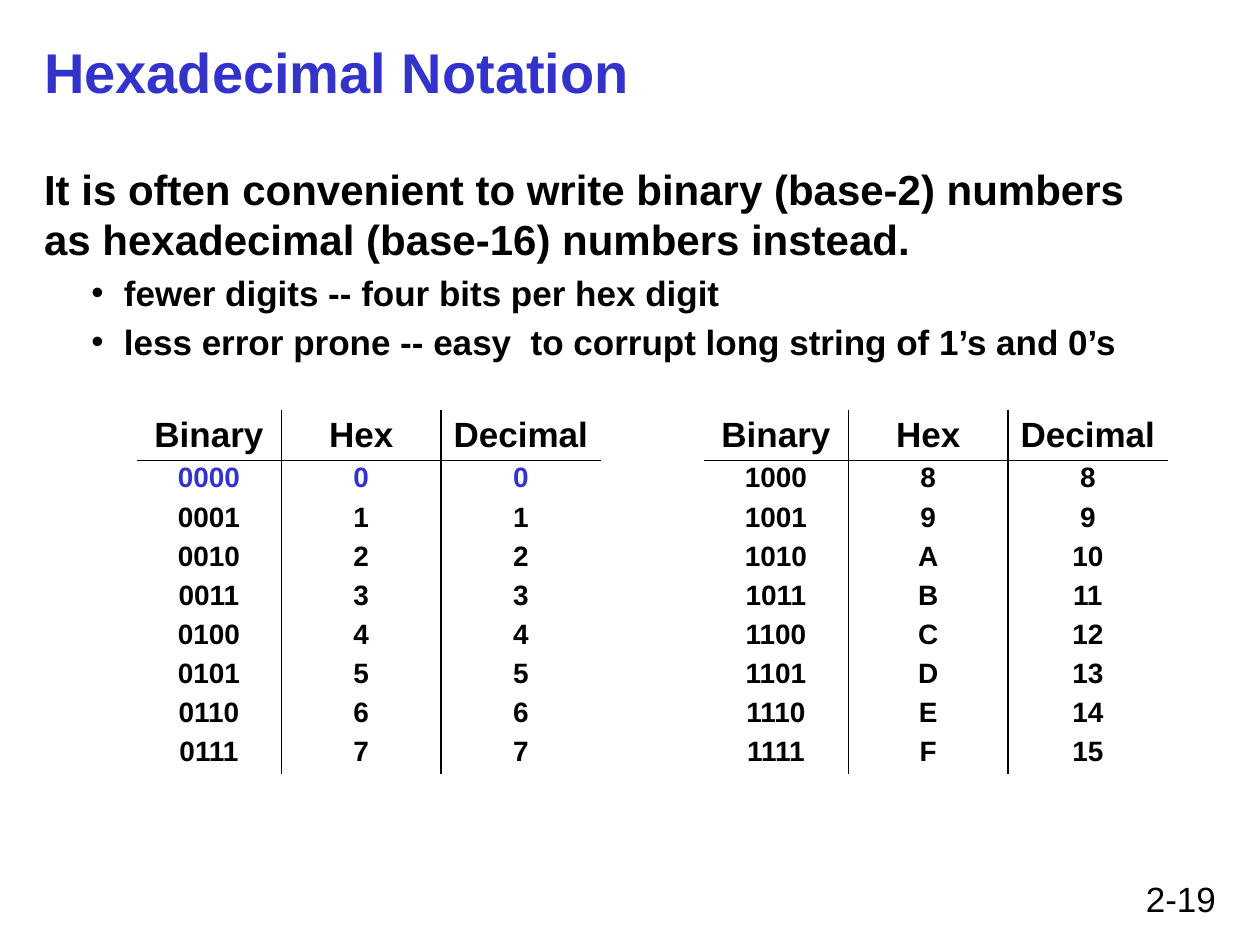
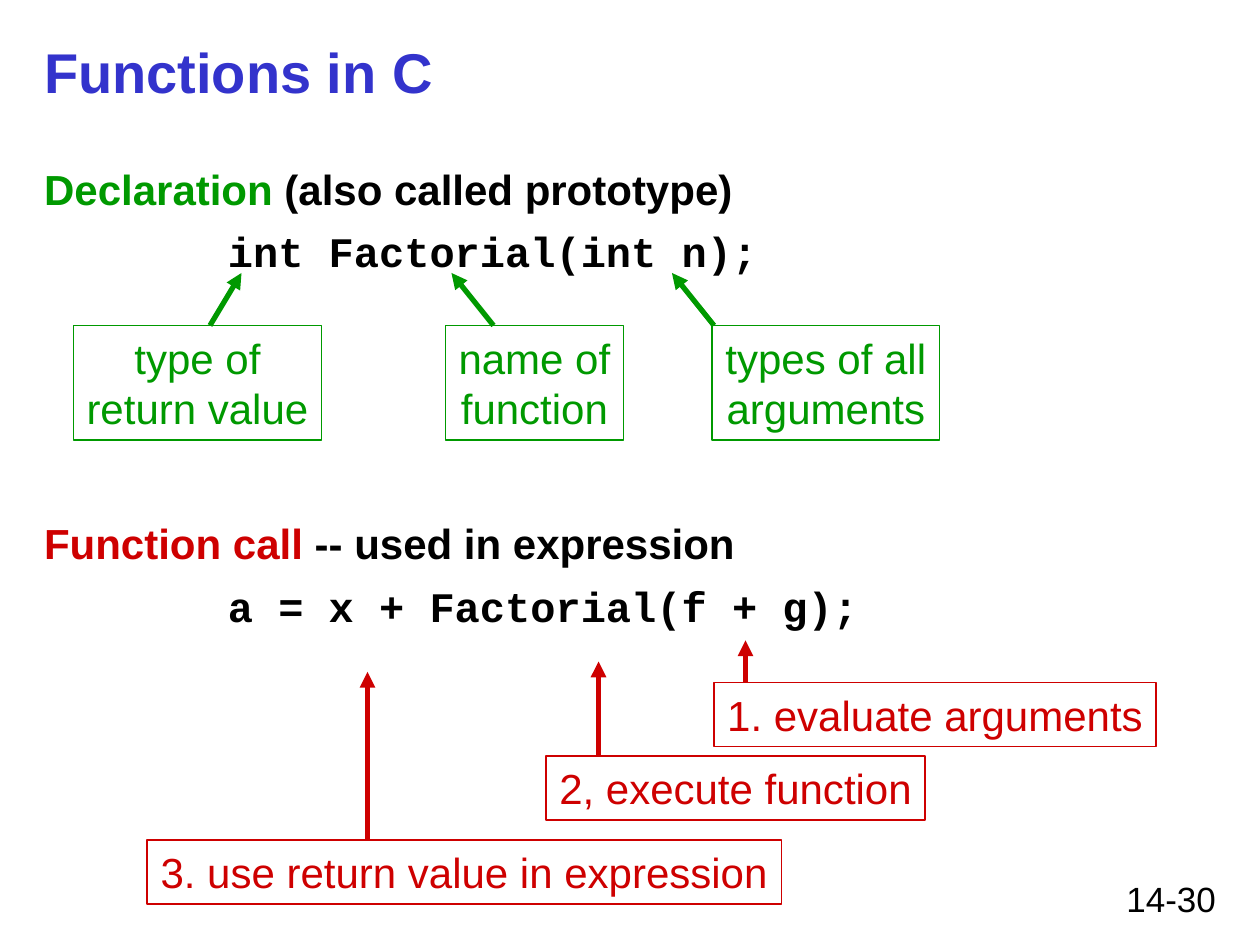
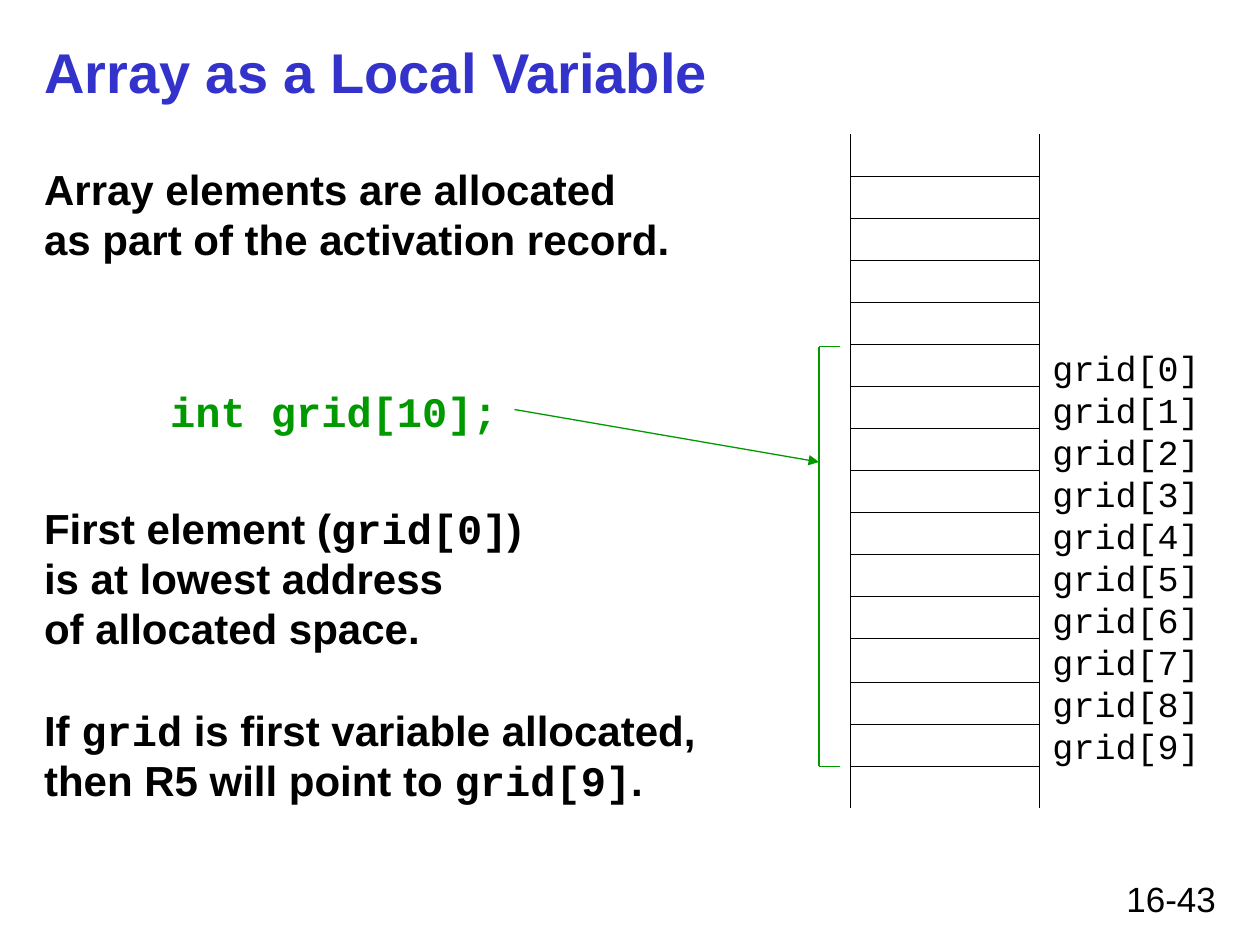
from lxml.etree import SubElement
from pptx import Presentation
from pptx.dml.color import RGBColor
from pptx.enum.shapes import MSO_CONNECTOR, MSO_SHAPE
from pptx.enum.text import MSO_ANCHOR, MSO_AUTO_SIZE, PP_ALIGN
from pptx.oxml.ns import qn
from pptx.util import Inches, Pt

HEX = {"ink": "000000", "blue": "3333CC", "green": "009900", "red": "CE0000"}
SANS, MONO = "Arial", "Courier New"
COLS, ROWS = 120, 90
LEAD = 1.2
CODE = {"lead": 31, "gap": 4.8}


def rgb(name):
    return RGBColor.from_string(HEX[name])


def put(obj, **vals):
    for key, val in vals.items():
        setattr(obj, key, val)


class Deck:
    """Holds the shared style and the slide being built; lengths are grid units."""

    def __init__(self):
        self.prs = Presentation()
        put(self.prs, slide_width=Inches(10), slide_height=Inches(7.5))
        self.slide = None

    def x(self, cols):
        return round(self.prs.slide_width * cols / COLS)

    def y(self, rows):
        return round(self.prs.slide_height * rows / ROWS)

    def area(self, left, top, wide, high):
        return self.x(left), self.y(top), self.x(wide), self.y(high)

    def place(self, shape, *box):
        put(shape, **dict(zip(("left", "top", "width", "height"), self.area(*box))))

    def span(self, para, text, size, tint="ink", font=SANS, bold=False):
        for i, line in enumerate(text.split("\n")):
            if i:
                para.add_line_break()
            if line:
                run = para.add_run()
                run.text = line
                put(run.font, size=Pt(size), name=font, bold=bold)
                run.font.color.rgb = rgb(tint)

    def page(self, title, number):
        self.slide = self.prs.slides.add_slide(self.prs.slide_layouts[1])
        head = self.slide.shapes.title
        self.place(head, 3, 2.25, 114, 9)
        put(head.text_frame, vertical_anchor=MSO_ANCHOR.MIDDLE,
            auto_size=MSO_AUTO_SIZE.NONE)
        para = head.text_frame.paragraphs[0]
        para.alignment = PP_ALIGN.LEFT
        self.span(para, title, 32, "blue", bold=True)
        self.note(number, 86, 83, 31, 5, align=PP_ALIGN.RIGHT)

    def body(self, *items):
        """Fill the body; an item is its spans and its paragraph format."""
        shape = self.slide.placeholders[1]
        self.place(shape, 3, 11.25, 114, 65)
        frame = shape.text_frame
        put(frame, auto_size=MSO_AUTO_SIZE.NONE, vertical_anchor=MSO_ANCHOR.TOP,
            margin_top=self.y(4.3))
        for i, (spans, form) in enumerate(items):
            para = frame.add_paragraph() if i else frame.paragraphs[0]
            size, dot = form.get("size", 24), form.get("dot")
            put(para, level=int(bool(dot)), alignment=PP_ALIGN.LEFT,
                line_spacing=Pt(form.get("lead", size * LEAD)),
                space_before=Pt(form.get("gap", 0)))
            props = para._p.get_or_add_pPr()
            props.set("marL", str(self.x(form.get("left", 0))))
            props.set("indent", str(self.x(form.get("hang", 0))))
            if dot:
                SubElement(props, qn("a:buChar")).set("char", dot)
            else:
                SubElement(props, qn("a:buNone"))
            for text, *look in spans:
                self.span(para, text, size, *look, bold=True)

    def fill(self, frame, text, size, tint, font, align):
        put(frame, word_wrap=False, auto_size=MSO_AUTO_SIZE.NONE)
        para = frame.paragraphs[0]
        put(para, alignment=align, line_spacing=Pt(size * LEAD))
        self.span(para, text, size, tint, font)

    def note(self, text, *box, font=SANS, align=PP_ALIGN.CENTER):
        shape = self.slide.shapes.add_textbox(*self.area(*box))
        self.fill(shape.text_frame, text, 20, "ink", font, align)
        shape.text_frame.word_wrap = True

    def label(self, text, tint, *box):
        shape = self.slide.shapes.add_shape(MSO_SHAPE.RECTANGLE, *self.area(*box))
        shape.shadow.inherit = False
        shape.fill.background()
        shape.line.color.rgb = rgb(tint)
        shape.line.width = Pt(0.75)
        shape.text_frame.vertical_anchor = MSO_ANCHOR.MIDDLE
        self.fill(shape.text_frame, text, 24, tint, SANS, PP_ALIGN.CENTER)

    def line(self, x1, y1, x2, y2, tint="ink", width=0.75, arrow=False):
        link = self.slide.shapes.add_connector(
            MSO_CONNECTOR.STRAIGHT, self.x(x1), self.y(y1), self.x(x2), self.y(y2))
        link.line.color.rgb = rgb(tint)
        link.line.width = Pt(width)
        if arrow:
            SubElement(link.line._get_or_add_ln(), qn("a:tailEnd")).set("type", "triangle")
        SubElement(link._element.spPr, qn("a:effectLst"))

    def edges(self, cell, shown):
        """Draw the sides named in shown and clear the others."""
        props = cell._tc.get_or_add_tcPr()
        for side in "LRTB":
            edge = SubElement(props, qn(f"a:ln{side}"))
            edge.set("w", str(Pt(1)))
            if side in shown:
                fill = SubElement(edge, qn("a:solidFill"))
                SubElement(fill, qn("a:srgbClr")).set("val", HEX["ink"])
            else:
                SubElement(edge, qn("a:noFill"))

    def table(self, left, top, rows, tints):
        wides, highs = (13.8, 15.2, 15.2), [4.86] + [3.73] * (len(rows) - 1)
        grid = self.slide.shapes.add_table(
            len(rows), len(wides), *self.area(left, top, sum(wides), sum(highs))).table
        put(grid, first_row=False, horz_banding=False)
        for col, wide in zip(grid.columns, wides):
            col.width = self.x(wide)
        for r, (row, high) in enumerate(zip(rows, highs)):
            grid.rows[r].height = self.y(high)
            for c, text in enumerate(row):
                cell = grid.cell(r, c)
                put(cell, margin_left=0, margin_right=0, margin_top=0,
                    margin_bottom=0, vertical_anchor=MSO_ANCHOR.MIDDLE)
                sides = ("L" if c else "") + ("R" if c < len(wides) - 1 else "")
                self.edges(cell, sides + {0: "B", 1: "T"}.get(r, ""))
                cell.fill.background()
                para = cell.text_frame.paragraphs[0]
                put(para, alignment=PP_ALIGN.CENTER, line_spacing=0.85 if r else 1.0)
                self.span(para, text, 16 if r else 20, tints.get(r, "ink"), bold=True)


def hexes(deck):
    deck.page("Hexadecimal Notation", "2-19")
    dots = {"size": 20, "gap": 4, "dot": "•", "left": 7.6, "hang": -3.1}
    deck.body(
        ([("It is often convenient to write binary (base-2) numbers\n"
           "as hexadecimal (base-16) numbers instead.",)], {}),
        ([("fewer digits -- four bits per hex digit",)], dots),
        ([("less error prone -- easy  to corrupt long string of 1’s and 0’s",)], dots))
    for left, first, tints in ((13, 0, {1: "blue"}), (67, 8, {})):
        rows = [(f"{n:04b}", f"{n:X}", str(n)) for n in range(first, first + 8)]
        deck.table(left, 39, [("Binary", "Hex", "Decimal")] + rows, tints)


def calls(deck):
    deck.page("Functions in C", "14-30")
    code = {**CODE, "left": 17.5}
    deck.body(
        ([("Declaration", "green"), (" (also called prototype)",)], {}),
        ([("int Factorial(int n);", "ink", MONO)], code),
        ([("Function call", "red"), (" -- used in expression",)], {"gap": 138}),
        ([("a = x + Factorial(f + g);", "ink", MONO)], code))
    for text, left, wide, tail, tip in (
            ("type of\nreturn value", 7, 23.6, 20, 23),
            ("name of\nfunction", 42.4, 17, 47, 43),
            ("types of all\narguments", 67.8, 21.7, 68, 64)):
        deck.label(text, "green", left, 31, wide, 10.9)
        deck.line(tail, 31, tip, 26, "green", 3, True)
    for text, left, top, wide, mid, tip in (
            ("1. evaluate arguments", 68, 65, 42.1, 71, 61),
            ("2, execute function", 52, 72, 36.1, 57, 63),
            ("3. use return value in expression", 14, 80, 60.4, 35, 64)):
        deck.label(text, "red", left, top, wide, 6.1)
        deck.line(mid, top, mid, tip, "red", 3, True)


def arrays(deck):
    deck.page("Array as a Local Variable", "16-43")
    deck.body(
        ([("Array elements are allocated\nas part of the activation record.",)], {}),
        ([("int grid[10];", "green", MONO)], {**CODE, "left": 12, "gap": 67}),
        ([("First element (",), ("grid[0]", "ink", MONO),
          (")\nis at lowest address\nof allocated space.",)], {"gap": 38}),
        ([("If ",), ("grid", "ink", MONO),
          (" is first variable allocated,\nthen R5 will point to ",),
          ("grid[9]", "ink", MONO), (".",)], {"gap": 29}))
    left, right = 81, 99
    for side in (left, right):
        deck.line(side, 12.8, side, 77)
    for i in range(15):
        rung = (16.8 if i < 12 else 17) + 4 * i
        deck.line(left, rung, right, rung)
    names = "\n".join(f"grid[{i}]" for i in range(10))
    deck.note(names, right, 32.4, 16.5, 41.2, font=MONO)
    marks = [(80, 33), (78, 33), (78, 73), (80, 73)]
    for start, end in zip(marks, marks[1:]):
        deck.line(*start, *end, "green")
    deck.line(49, 39, 78, 44, "green", arrow=True)


def main():
    deck = Deck()
    for build in (hexes, calls, arrays):
        build(deck)
    deck.prs.save("out.pptx")


if __name__ == "__main__":
    main()
